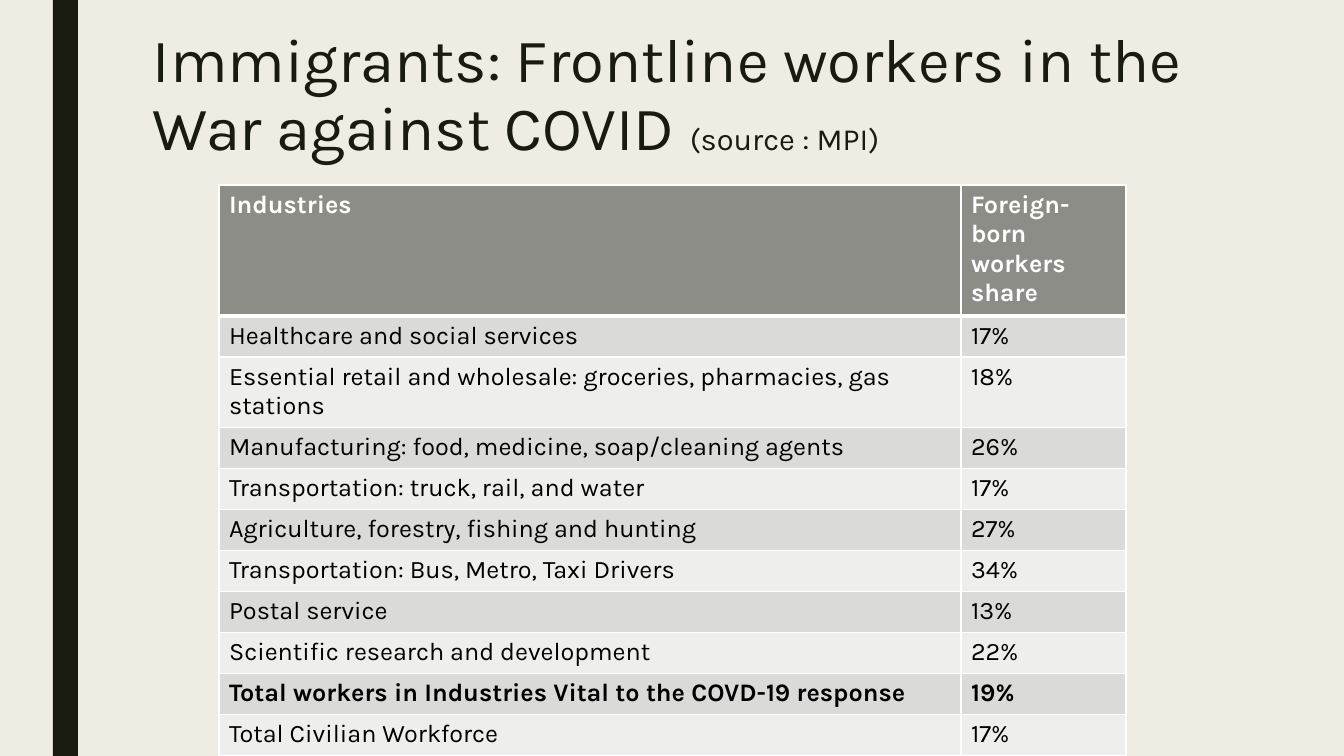
"""Build a slide on the foreign-born share of workers in essential industries."""
import pptx
import pptx.util
import pptx.dml.color
import pptx.enum.shapes
import pptx.enum.text
import pptx.oxml
import pptx.oxml.ns

RGBColor = pptx.dml.color.RGBColor
CREAM = RGBColor(0xEF, 0xED, 0xE3)
INK = RGBColor(0x19, 0x1B, 0x0E)
WHITE = RGBColor(0xFF, 0xFF, 0xFF)
BLACK = RGBColor(0, 0, 0)
HEADER_GREY = RGBColor(0x8C, 0x8D, 0x86)
DARK_BAND = RGBColor(0xDA, 0xDB, 0xD9)
LIGHT_BAND = RGBColor(0xEE, 0xEE, 0xED)


def px(length):
    return pptx.util.Emu(round(length * 914400 / 100.8))


def add_text(paragraph, text, size=18, color=BLACK, bold=False):
    run = paragraph.add_run()
    run.text = text
    run.font.name = "Karla"
    run.font.size = pptx.util.Pt(size)
    run.font.bold = bold
    run.font.color.rgb = color


deck = pptx.Presentation()
deck.slide_width = px(1344)
deck.slide_height = px(756)
slide = deck.slides.add_slide(deck.slide_layouts[6])
slide.background.fill.solid()
slide.background.fill.fore_color.rgb = CREAM

side_bar = slide.shapes.add_shape(
    pptx.enum.shapes.MSO_SHAPE.RECTANGLE, px(53), 0, px(25), px(756))
side_bar.shadow.inherit = False
side_bar.fill.solid()
side_bar.fill.fore_color.rgb = INK
side_bar.line.fill.background()

title = slide.shapes.add_textbox(px(143), px(21), px(1126), px(163)).text_frame
title.word_wrap = True
title.vertical_anchor = pptx.enum.text.MSO_ANCHOR.TOP
title.margin_top = px(8)
headline = title.paragraphs[0]
headline.line_spacing = 0.91
add_text(headline, "Immigrants: Frontline workers in the War against COVID ", size=44, color=INK)
add_text(headline, "(source : MPI)", size=22, color=INK)

TOTAL = "Total workers in Industries Vital to the COVD-19 response"
shares = [
    ("Industries", "Foreign-born workers share"),
    ("Healthcare and social services", "17%"),
    ("Essential retail and wholesale: groceries, pharmacies, gas stations", "18%"),
    ("Manufacturing: food, medicine, soap/cleaning agents", "26%"),
    ("Transportation: truck, rail, and water", "17%"),
    ("Agriculture, forestry, fishing and hunting", "27%"),
    ("Transportation: Bus, Metro, Taxi Drivers", "34%"),
    ("Postal service", "13%"),
    ("Scientific research and development", "22%"),
    (TOTAL, "19%"),
    ("Total Civilian Workforce", "17%"),
]
industries = slide.shapes.add_table(
    len(shares), 2, px(219), px(185), px(907), px(502)).table
for column, width in zip(industries.columns, (742, 165)):
    column.width = px(width)

for row, entry in enumerate(shares):
    is_header = row == 0
    industries.rows[row].height = px(92 if is_header else 41)
    band = HEADER_GREY if is_header else DARK_BAND if row % 2 else LIGHT_BAND
    for col, text in enumerate(entry):
        cell = industries.cell(row, col)
        add_text(cell.text_frame.paragraphs[0], text,
                 color=WHITE if is_header else BLACK,
                 bold=is_header or entry[0] == TOTAL)
        borders = cell._tc.get_or_add_tcPr()
        for side in ("lnL", "lnR", "lnT", "lnB"):
            under_header = (row, side) in ((0, "lnB"), (1, "lnT"))
            borders.append(pptx.oxml.parse_xml(
                f'<a:{side} {pptx.oxml.ns.nsdecls("a")} w="{38100 if under_header else 12700}">'
                f'<a:solidFill><a:srgbClr val="{WHITE}"/></a:solidFill></a:{side}>'))
        cell.fill.solid()
        cell.fill.fore_color.rgb = band

deck.save("out.pptx")
